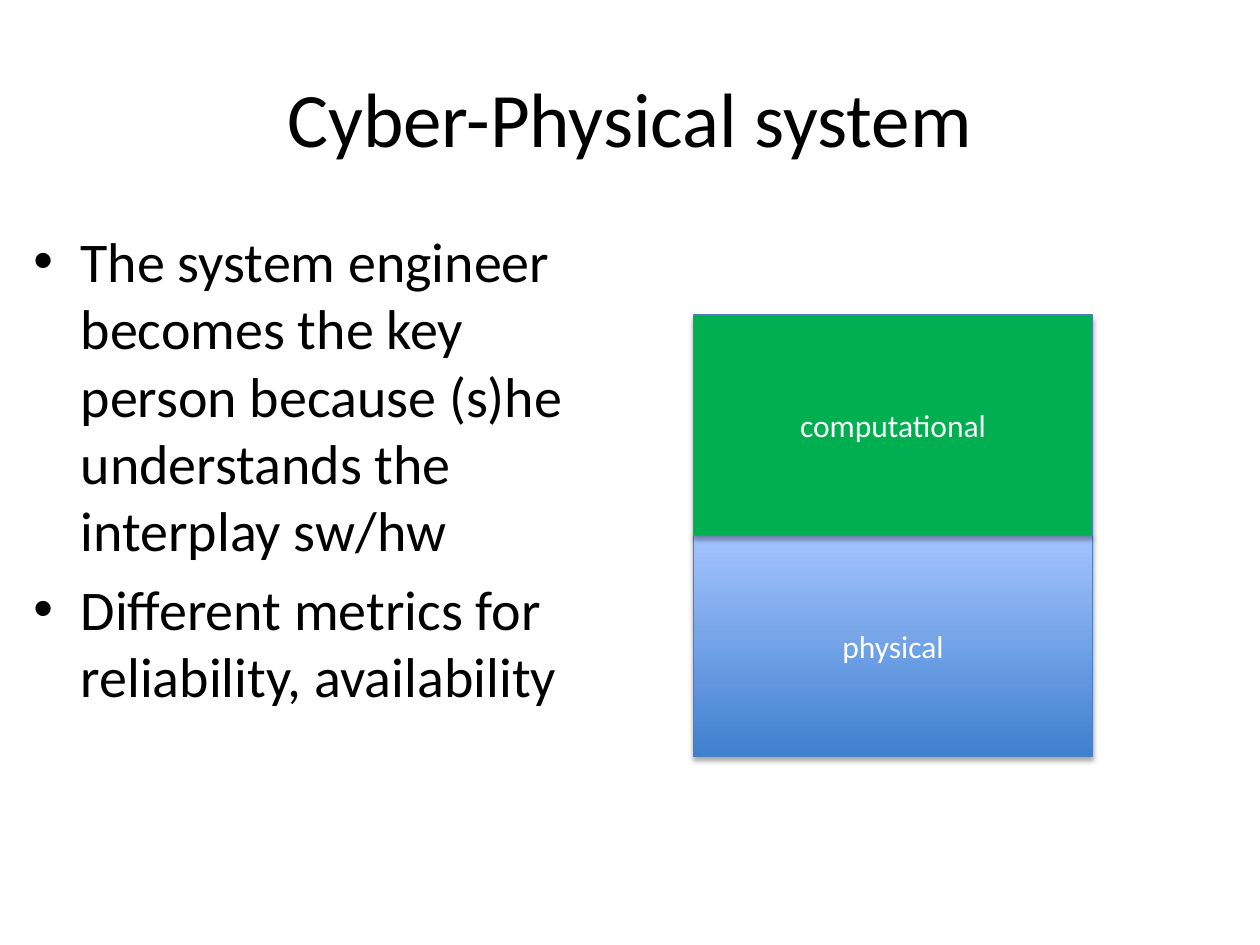
from dataclasses import dataclass

from lxml.etree import SubElement
from pptx import Presentation
from pptx.dml.color import RGBColor
from pptx.enum.shapes import MSO_SHAPE
from pptx.enum.text import MSO_ANCHOR, PP_ALIGN
from pptx.oxml.ns import qn
from pptx.util import Pt


@dataclass(frozen=True)
class Theme:
    font: str = "Calibri"
    ink: str = "000000"
    on_fill: str = "FFFFFF"
    outline: str = "4B7EBC"
    shadow: str = "000000"
    computational: tuple = ("00B050",)
    physical: tuple = ("3F80CE", "A4C4FF")  # bottom to top
    title_size: float = 44
    body_size: float = 32
    label_size: float = 18


THEME = Theme()


def rgb(value):
    return RGBColor.from_string(value)


def style_paragraph(paragraph, size, color, align=PP_ALIGN.LEFT):
    paragraph.alignment = align
    for run in paragraph.runs:
        run.font.name = THEME.font
        run.font.size = Pt(size)
        run.font.color.rgb = rgb(color)


def add_bullet(paragraph, indent):
    props = paragraph._p.get_or_add_pPr()
    props.set("marL", str(Pt(indent)))
    props.set("indent", str(-Pt(indent)))
    SubElement(props, qn("a:buFont"), typeface="Arial")
    SubElement(props, qn("a:buChar"), char="•")


def add_soft_shadow(shape):
    shape.shadow.inherit = False
    effects = shape._element.spPr.find(qn("a:effectLst"))
    outer = SubElement(effects, qn("a:outerShdw"), blurRad=str(Pt(3.1)),
                       dist=str(Pt(1.8)), dir="5400000", rotWithShape="0")
    color = SubElement(outer, qn("a:srgbClr"), val=THEME.shadow)
    SubElement(color, qn("a:alpha"), val="35000")


def add_title(slide, box, wording):
    frame = slide.shapes.add_textbox(*map(Pt, box)).text_frame
    frame.word_wrap = True
    frame.vertical_anchor = MSO_ANCHOR.MIDDLE
    frame.text = wording
    style_paragraph(frame.paragraphs[0], THEME.title_size, THEME.ink,
                    PP_ALIGN.CENTER)


def add_bullet_list(slide, box, points):
    frame = slide.shapes.add_textbox(*map(Pt, box)).text_frame
    frame.word_wrap = True
    frame.text = "\n".join(points)
    for paragraph in frame.paragraphs:
        style_paragraph(paragraph, THEME.body_size, THEME.ink)
        paragraph.space_before = Pt(THEME.body_size * 0.2)
        add_bullet(paragraph, indent=27)


def add_layer(slide, box, label, colors):
    layer = slide.shapes.add_shape(MSO_SHAPE.RECTANGLE, *map(Pt, box))
    if len(colors) == 1:
        layer.fill.solid()
        layer.fill.fore_color.rgb = rgb(colors[0])
    else:
        layer.fill.gradient()
        layer.fill.gradient_angle = 90
        for stop, color in zip(layer.fill.gradient_stops, colors):
            stop.color.rgb = rgb(color)
    layer.line.color.rgb = rgb(THEME.outline)
    layer.line.width = Pt(0.75)
    add_soft_shadow(layer)
    frame = layer.text_frame
    frame.vertical_anchor = MSO_ANCHOR.MIDDLE
    frame.text = label
    style_paragraph(frame.paragraphs[0], THEME.label_size, THEME.on_fill,
                    PP_ALIGN.CENTER)


def add_layer_stack(slide, box, layers):
    """Stack equal layers from the bottom up, so each one shades the one below."""
    left, top, width, height = box
    layer_height = height / len(layers)
    for level, (label, colors) in enumerate(layers, start=1):
        layer_top = top + height - level * layer_height
        add_layer(slide, (left, layer_top, width, layer_height), label, colors)


def main():
    deck = Presentation()
    deck.slide_width, deck.slide_height = Pt(720), Pt(540)
    slide = deck.slides.add_slide(deck.slide_layouts[6])

    # Heading
    add_title(slide, (36, 21.6, 648, 90), "Cyber-Physical system")

    # Key points on the left
    add_bullet_list(slide, (12, 126, 330, 356.4), [
        "The system engineer becomes the key person because (s)he "
        "understands the interplay sw/hw",
        "Different metrics for reliability, availability",
    ])

    # System layers on the right
    add_layer_stack(slide, (396.3, 180, 228, 252), [
        ("physical", THEME.physical),
        ("computational", THEME.computational),
    ])

    deck.save("out.pptx")


if __name__ == "__main__":
    main()
